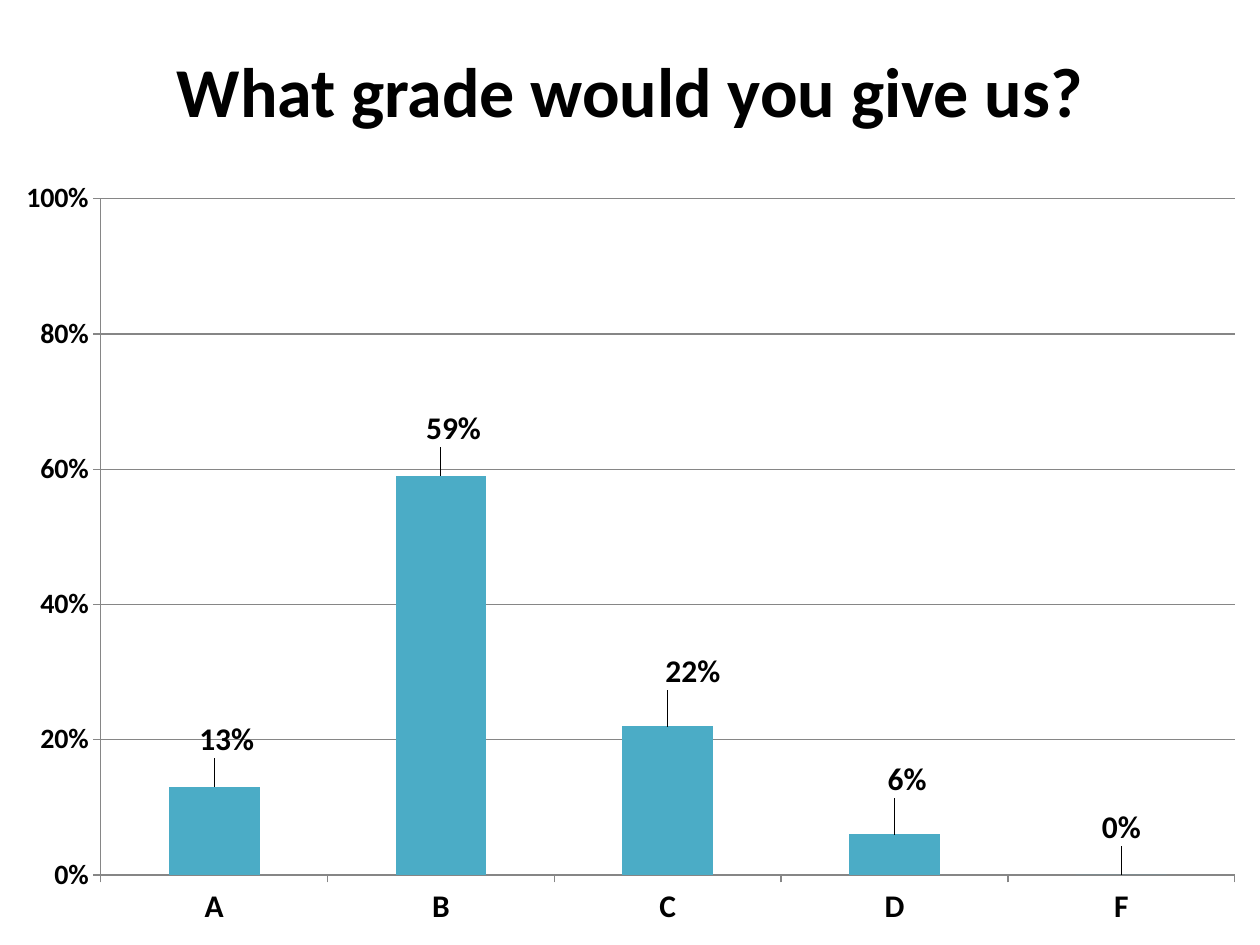
from lxml.etree import fromstring
from pptx import Presentation
from pptx.chart.data import CategoryChartData
from pptx.dml.color import RGBColor
from pptx.enum.chart import XL_CHART_TYPE, XL_LABEL_POSITION, XL_TICK_MARK
from pptx.enum.text import MSO_ANCHOR, PP_ALIGN
from pptx.util import Cm, Pt

# Content
TITLE = "What grade would you give us?"
# grade, share, label shift right and down as fractions of the chart
GRADES = [
    ("A", 0.13, 0.01, -0.03),
    ("B", 0.59, 0.01, -0.03),
    ("C", 0.22, 0.02, -0.04),
    ("D", 0.06, 0.01, -0.04),
    ("F", 0, 0, -0.03),
]
PLOT_AREA = {"x": 0.08, "y": 0.04, "w": 0.9, "h": 0.87}

FONT = "Calibri"
BLACK = RGBColor(0x00, 0x00, 0x00)
TEAL = RGBColor(0x4B, 0xAC, 0xC6)
GRAY = RGBColor(0x86, 0x86, 0x86)
CHART_NS = "http://schemas.openxmlformats.org/drawingml/2006/chart"


def style_font(font, size):
    font.name = FONT
    font.size = Pt(size)
    font.bold = True
    font.color.rgb = BLACK


def chart_xml(markup):
    return fromstring(markup.replace(">", f' xmlns:c="{CHART_NS}">', 1))


def manual_layout(inner=False, **places):
    parts = ""
    if inner:
        parts = ('<c:layoutTarget val="inner"/>'
                 '<c:xMode val="edge"/><c:yMode val="edge"/>')
    parts += "".join(f'<c:{key} val="{value}"/>' for key, value in places.items())
    return chart_xml(f"<c:layout><c:manualLayout>{parts}</c:manualLayout></c:layout>")


deck = Presentation()
deck.slide_width, deck.slide_height = Cm(25.4), Cm(19.05)
page = deck.slides.add_slide(deck.slide_layouts[6])

# Title
box = page.shapes.add_textbox(0, 0, deck.slide_width, Cm(3.6))
frame = box.text_frame
frame.word_wrap = True
frame.vertical_anchor = MSO_ANCHOR.MIDDLE
frame.text = TITLE
para = frame.paragraphs[0]
para.alignment = PP_ALIGN.CENTER
style_font(para.runs[0].font, 40)

# Chart
data = CategoryChartData(number_format="0%")
data.categories = [grade for grade, *_ in GRADES]
data.add_series("Series 1", [share for _, share, *_ in GRADES])
top = Cm(3.38)
chart = page.shapes.add_chart(
    XL_CHART_TYPE.COLUMN_CLUSTERED, 0, top,
    deck.slide_width, deck.slide_height - top, data).chart
chart.has_legend = False
chart.has_title = False
chart.font.name = FONT
chart.font.size = Pt(18)
chart.font.color.rgb = BLACK

# Axes
for axis, size in ((chart.category_axis, 18), (chart.value_axis, 16)):
    style_font(axis.tick_labels.font, size)
    axis.major_tick_mark = XL_TICK_MARK.OUTSIDE
    axis.minor_tick_mark = XL_TICK_MARK.NONE
    axis.format.line.color.rgb = GRAY
    axis.format.line.width = Pt(0.75)
shares = chart.value_axis
shares.minimum_scale, shares.maximum_scale, shares.major_unit = 0, 1, 0.2
shares.tick_labels.number_format = "0%"
shares.tick_labels.number_format_is_linked = False
shares.has_major_gridlines = True
shares.major_gridlines.format.line.color.rgb = GRAY
shares.major_gridlines.format.line.width = Pt(0.75)

# Bars
plot = chart.plots[0]
plot.gap_width = 150
plot.vary_by_categories = False
bars = plot.series[0]
bars.format.fill.solid()
bars.format.fill.fore_color.rgb = TEAL

# Value labels, each moved a little away from its bar
labels = bars.data_labels
labels.show_value = True
labels.number_format = "0%"
labels.number_format_is_linked = False
style_font(labels.font, 18)
for index in range(len(GRADES)):
    label = bars.points[index].data_label
    style_font(label.font, 18)
    label.position = XL_LABEL_POSITION.OUTSIDE_END
for (_, _, right, down), mark in zip(GRADES, bars._element.xpath("c:dLbls/c:dLbl/c:idx")):
    mark.addnext(chart_xml('<c:numFmt formatCode="0%" sourceLinked="0"></c:numFmt>'))
    mark.addnext(manual_layout(x=right, y=down))

# Plot area inside the chart
area = chart._chartSpace.xpath("c:chart/c:plotArea")[0]
for old in area.xpath("c:layout"):
    area.remove(old)
area.insert(0, manual_layout(inner=True, **PLOT_AREA))

deck.save("out.pptx")
